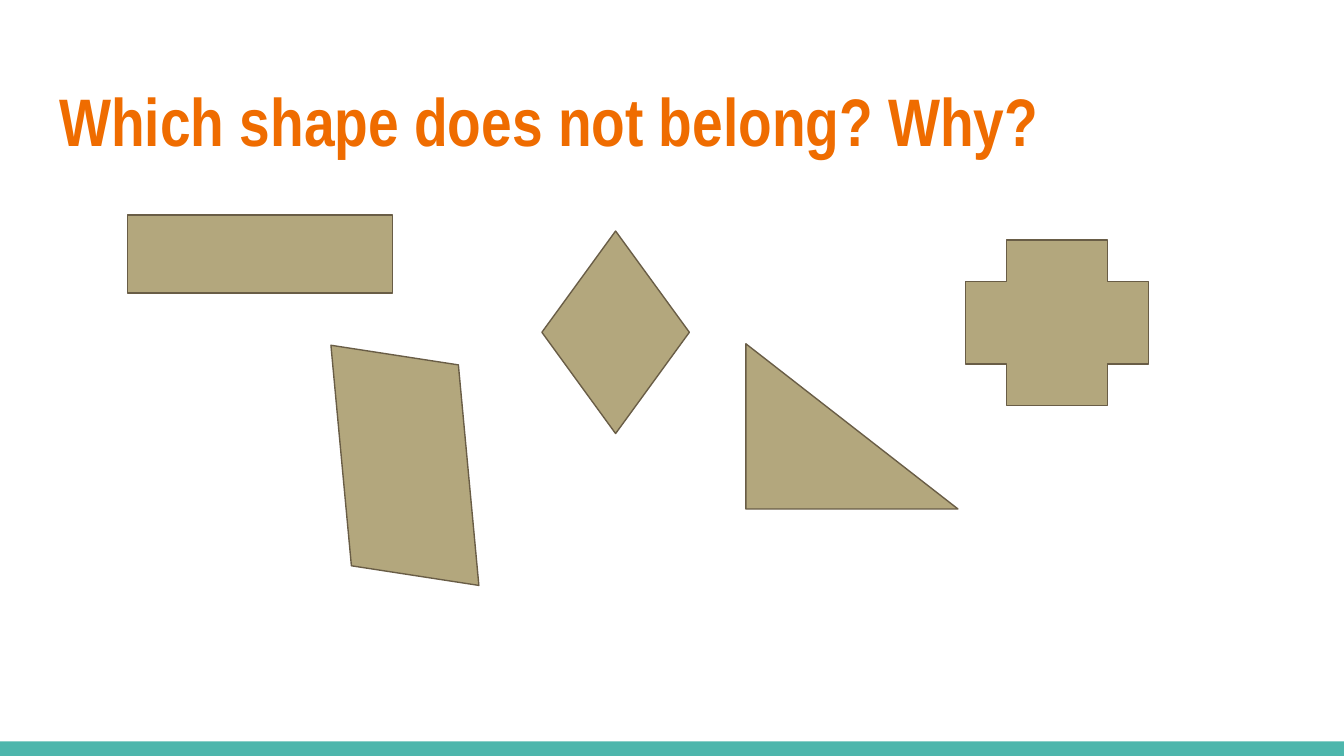
from pptx import Presentation, util as u
from pptx.dml import color
from pptx.enum import shapes, text

TITLE = "Which shape does not belong? Why?"
TITLE_BOX = (24.5, 35.3, 671, 55.4)
FOOTER_BAR = (0, 397.2, 720, 7.8)
KINDS = shapes.MSO_SHAPE
FIGURES = [
    (KINDS.RIGHT_TRIANGLE, (399.6, 184.2, 113.6, 88.5), 0),
    (KINDS.RECTANGLE, (68.2, 115.2, 142, 41.8), 0),
    (KINDS.PARALLELOGRAM, (149.2, 215.8, 135.4, 67), 84.7),
    (KINDS.DIAMOND, (290.3, 123.8, 79, 108.5), 0),
    (KINDS.CROSS, (517.2, 128.6, 98.2, 88.5), 0),
]


def rgb(value):
    return color.RGBColor.from_string(value)


def place(shape, box):
    shape.left, shape.top, shape.width, shape.height = map(u.Pt, box)


def write(shape, content, size, font, fill, bold=False, inset=7.2):
    frame = shape.text_frame
    frame.word_wrap = True
    frame.auto_size = text.MSO_AUTO_SIZE.NONE
    frame.vertical_anchor = text.MSO_ANCHOR.TOP
    frame.margin_left = frame.margin_right = u.Pt(inset)
    frame.margin_top = frame.margin_bottom = u.Pt(inset)
    paragraph = frame.paragraphs[0]
    paragraph.alignment = text.PP_ALIGN.LEFT
    paragraph.line_spacing = 1.0
    run = paragraph.add_run()
    run.text = content
    run.font.size = u.Pt(size)
    run.font.name = font
    run.font.bold = bold
    run.font.color.rgb = rgb(fill)


def draw(slide, kind, box, fill, line=None, rotation=0):
    shape = slide.shapes.add_shape(kind, *map(u.Pt, box))
    shape.shadow.inherit = False
    shape.rotation = rotation
    shape.fill.solid()
    shape.fill.fore_color.rgb = rgb(fill)
    if line:
        shape.line.color.rgb = rgb(line)
        shape.line.width = u.Pt(0.75)
    else:
        shape.line.fill.background()
    return shape


def main():
    presentation = Presentation()
    presentation.slide_width, presentation.slide_height = u.Pt(720), u.Pt(405)
    slide = presentation.slides.add_slide(presentation.slide_layouts[5])

    draw(slide, KINDS.RECTANGLE, FOOTER_BAR, "4DB6AC")
    title = slide.shapes.title
    place(title, TITLE_BOX)
    write(title, TITLE, size=36, font="Arial Narrow", fill="EF6C00", bold=True)

    for kind, box, rotation in FIGURES:
        draw(slide, kind, box, "B3A77D", "695D46", rotation)

    presentation.save("out.pptx")


if __name__ == "__main__":
    main()
